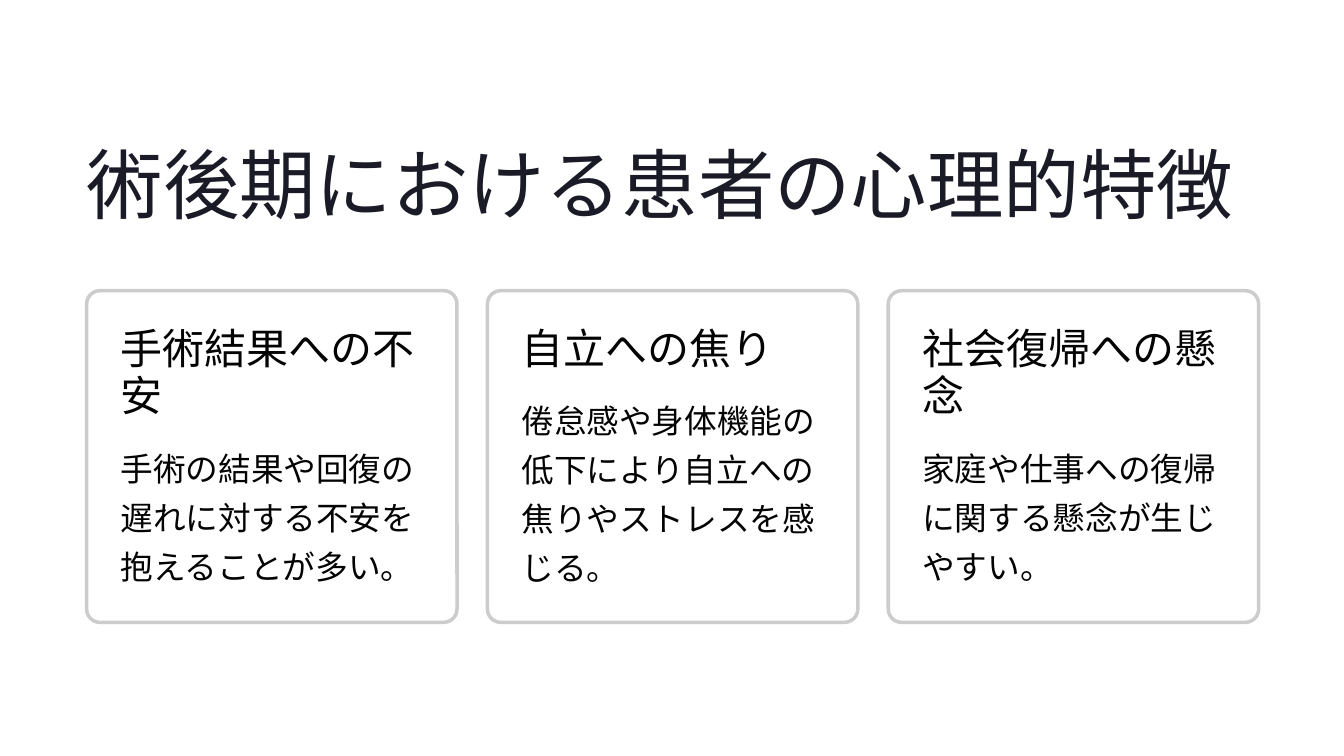
"""Build a slide of three cards on the psychology of patients after surgery."""
from lxml import etree
from pptx import Presentation
from pptx.dml.color import RGBColor
from pptx.enum.shapes import MSO_SHAPE as Preset
from pptx.oxml.ns import qn
from pptx.util import Cm, Pt

COLORS = {"title": "1B1B27", "text": "030303", "card": "FFFFFF", "border": "CCCCCC"}
FORMATS = {
    "title": {"name": "Inter", "size": Pt(65.5)},
    "heading": {"name": "Inter", "size": Pt(36)},
    "body": {"name": "Roboto", "size": Pt(28)},
}
SPACING = {"title": Pt(82), "heading": Pt(41), "body": Pt(42)}
CARDS = [
    ("手術結果への不安", 2, "手術の結果や回復の遅れに対する不安を抱えることが多い。"),
    ("自立への焦り", 1, "倦怠感や身体機能の低下により自立への焦りやストレスを感じる。"),
    ("社会復帰への懸念", 2, "家庭や仕事への復帰に関する懸念が生じやすい。"),
]
LEFT, CARD_TOP, CARD_WIDTH, CARD_HEIGHT = 2.62, 8.79, 11.2, 10.03
PITCH, PADDING, HEADING_LINE, HEADING_GAP = 12.12, 1.03, 1.45, 0.55

deck = Presentation()
deck.slide_width, deck.slide_height = Cm(40.64), Cm(22.86)
slide = deck.slides.add_slide(deck.slide_layouts[6])


def add_text(text, style, color, left, top, width, height, wrap=True):
    frame = slide.shapes.add_textbox(Cm(left), Cm(top), Cm(width), Cm(height)).text_frame
    frame.word_wrap = wrap
    for side in ("left", "top", "right", "bottom"):
        setattr(frame, f"margin_{side}", 0)
    paragraph = frame.paragraphs[0]
    paragraph.line_spacing = SPACING[style]
    run = paragraph.add_run()
    run.text = text
    for key, value in FORMATS[style].items():
        setattr(run.font, key, value)
    run.font.color.rgb = RGBColor.from_string(COLORS[color])


add_text("術後期における患者の心理的特徴", "title", "title", LEFT, 4.04, 34.87, 2.9, wrap=False)

for index, (heading, heading_lines, body) in enumerate(CARDS):
    card_left = LEFT + index * PITCH
    card = slide.shapes.add_shape(
        Preset.ROUNDED_RECTANGLE, Cm(card_left), Cm(CARD_TOP), Cm(CARD_WIDTH), Cm(CARD_HEIGHT))
    card.shadow.inherit = False
    card.adjustments[0] = 0.04
    card.fill.solid()
    card.fill.fore_color.rgb = RGBColor.from_string(COLORS["card"])
    fill_color = card.fill._xPr.find(qn("a:solidFill"))[0]
    etree.SubElement(fill_color, qn("a:alpha"), val="95000")
    card.line.color.rgb = RGBColor.from_string(COLORS["border"])
    card.line.width = Pt(3)

    text_left, text_width = card_left + PADDING, CARD_WIDTH - 2 * PADDING
    heading_top = CARD_TOP + PADDING
    heading_height = heading_lines * HEADING_LINE
    body_top = heading_top + heading_height + HEADING_GAP
    body_height = CARD_TOP + CARD_HEIGHT - PADDING - body_top
    add_text(heading, "heading", "text", text_left, heading_top, text_width, heading_height)
    add_text(body, "body", "text", text_left, body_top, text_width, body_height)

deck.save("out.pptx")
